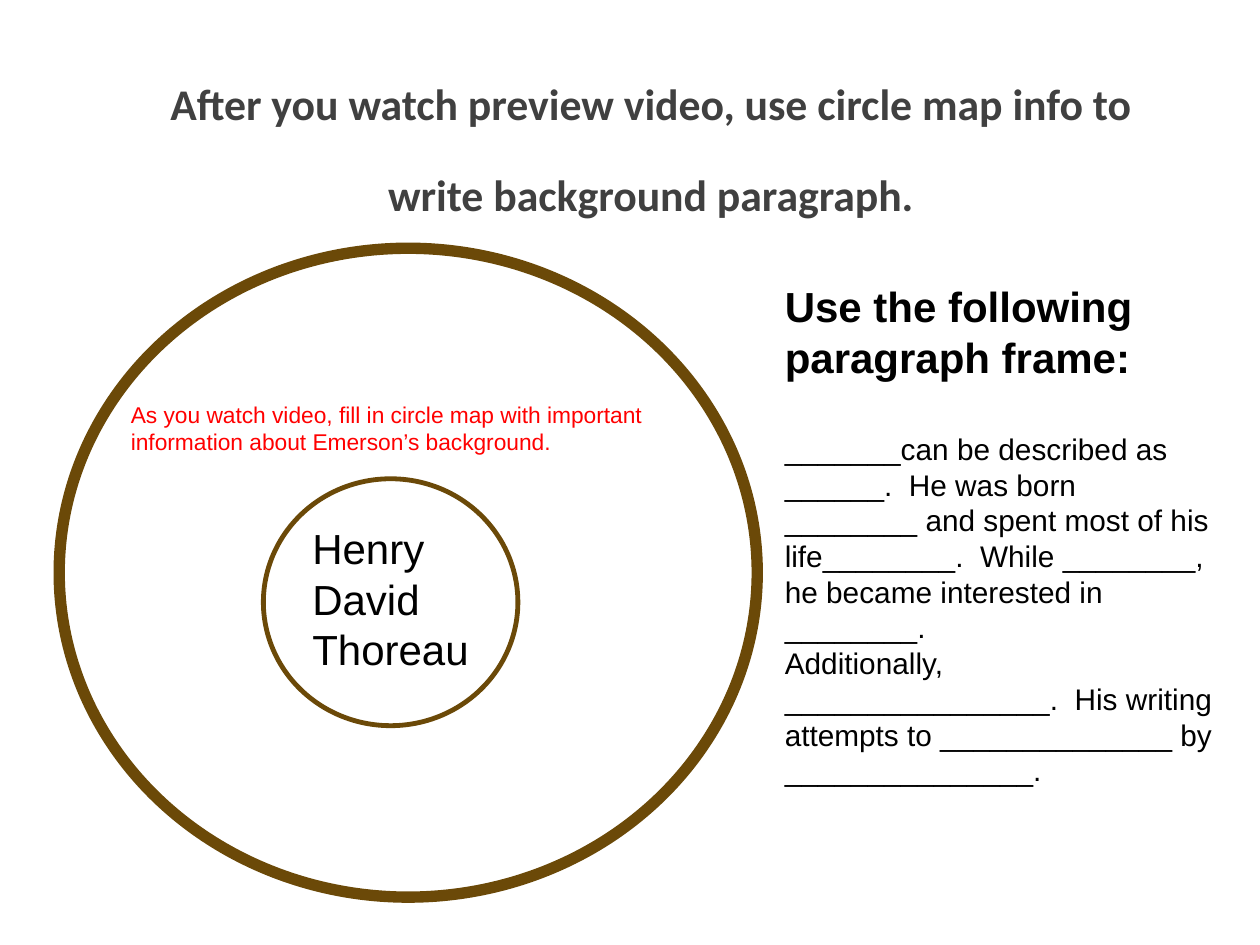
import pptx
import pptx.dml.color
import pptx.enum.shapes
import pptx.enum.text
import pptx.util

BROWN = pptx.dml.color.RGBColor(0x6B, 0x49, 0x08)
GRAY = pptx.dml.color.RGBColor(0x40, 0x40, 0x40)
BLACK = pptx.dml.color.RGBColor(0, 0, 0)
RED = pptx.dml.color.RGBColor(0xFF, 0, 0)

FRAME_LINES = (
    "_______can be described as ______.  He was born",
    "________ and spent most of his life________.  While ________, he became interested in ________.",
    "Additionally, ________________.  His writing attempts to ______________ by _______________.",
)


def inches(*lengths):
    """Convert lengths in inches to slide units."""
    return [pptx.util.Inches(length) for length in lengths]


def add_ring(page, area, weight):
    """Draw an unfilled brown ellipse."""
    ring = page.shapes.add_shape(pptx.enum.shapes.MSO_SHAPE.OVAL, *inches(*area))
    ring.shadow.inherit = False
    ring.fill.background()
    ring.line.color.rgb = BROWN
    ring.line.width = pptx.util.Pt(weight)


def add_box(page, area):
    """Add a wrapping text box and return its text frame."""
    frame = page.shapes.add_textbox(*inches(*area)).text_frame
    frame.word_wrap = True
    return frame


def write(para, text, size, color=BLACK, bold=False, font="Arial"):
    """Add one styled run to a paragraph."""
    span = para.add_run()
    span.text = text
    span.font.name = font
    span.font.size = pptx.util.Pt(size)
    span.font.bold = bold
    span.font.color.rgb = color


def add_title(page):
    """Add the centred heading."""
    frame = add_box(page, (1.19, 0.3, 7.95, 1.46))
    frame.vertical_anchor = pptx.enum.text.MSO_ANCHOR.MIDDLE
    para = frame.paragraphs[0]
    para.alignment = pptx.enum.text.PP_ALIGN.CENTER
    para.line_spacing = pptx.util.Pt(52)
    write(para, "After you watch preview video, use circle map info to write background paragraph.",
          25, GRAY, True, "Calibri")


def add_circle_map(page):
    """Add both rings with the name and the instruction."""
    add_ring(page, (0.47, 1.97, 5.54, 5.15), 6.5)
    add_ring(page, (2.09, 3.8, 2.02, 1.96), 2.75)
    name = add_box(page, (2.38, 4.1, 1.72, 1.31))
    write(name.paragraphs[0], "Henry David Thoreau", 24)
    hint = add_box(page, (0.94, 3.13, 4.48, 0.54))
    write(hint.paragraphs[0],
          "As you watch video, fill in circle map with important information about Emerson’s background.",
          13, RED)


def add_paragraph_frame(page):
    """Add the fill-in paragraph under its heading."""
    frame = add_box(page, (6.13, 2.18, 3.61, 3.87))
    write(frame.paragraphs[0], "Use the following paragraph frame:", 24, bold=True)
    for number, line in enumerate(FRAME_LINES):
        para = frame.add_paragraph()
        if number == 0:
            para.space_before = pptx.util.Pt(28)
        write(para, line, 17)


def main():
    """Build and save the slide."""
    deck = pptx.Presentation()
    deck.slide_width, deck.slide_height = inches(10, 7.5)
    page = deck.slides.add_slide(deck.slide_layouts[6])
    add_title(page)
    add_circle_map(page)
    add_paragraph_frame(page)
    deck.save("out.pptx")


if __name__ == "__main__":
    main()
